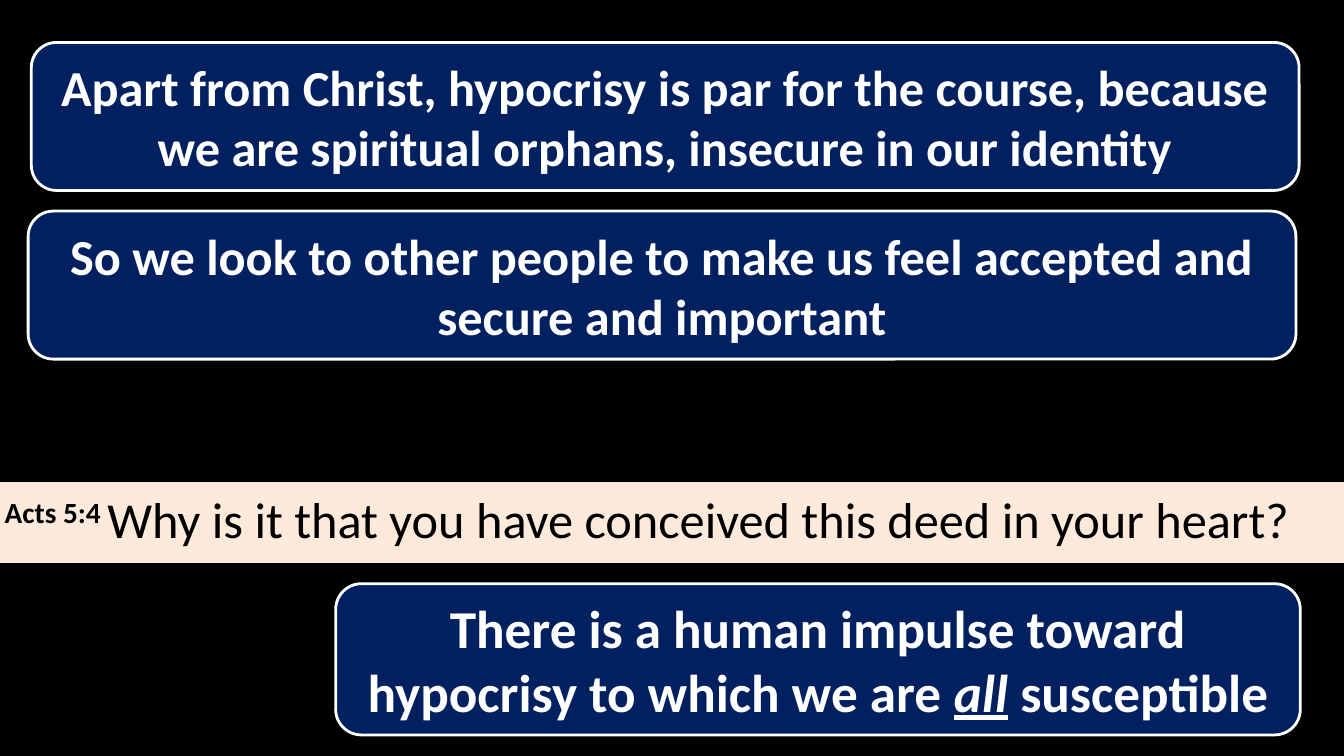
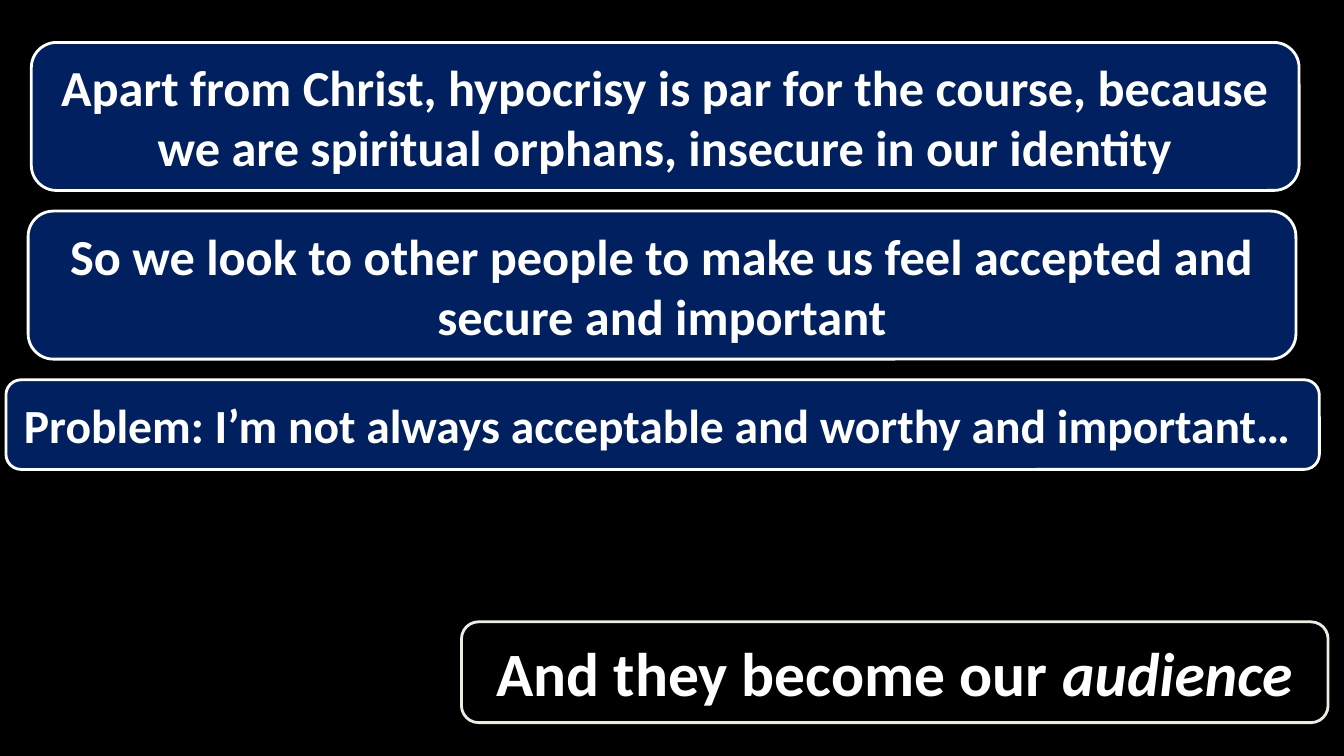
import pptx
import pptx.dml.color
import pptx.enum.shapes
import pptx.enum.text
import pptx.util
from dataclasses import dataclass

Cm, Pt = pptx.util.Cm, pptx.util.Pt
SHAPE = pptx.enum.shapes.MSO_SHAPE
ALIGN = pptx.enum.text.PP_ALIGN
ANCHOR = pptx.enum.text.MSO_ANCHOR


@dataclass(frozen=True)
class Theme:
    font: str = "Calibri"
    black: str = "000000"
    white: str = "FFFFFF"
    navy: str = "002060"
    peach: str = "FDEADA"
    cream: str = "EEECE1"
    problem_size: int = 34
    body_size: int = 36
    impulse_size: int = 38
    audience_size: int = 44
    callout_line: float = 2
    verse_line: float = 0.75


THEME = Theme()
CALLOUT_ADJUSTMENTS = (-0.22, 0.5, 0.17)
STACK_TOP, STACK_GAP = 1.07, 0.52

# Text is a list of (words, style) runs; stacked callouts need no top.
PREMISES = [
    dict(text=[("Apart from Christ, hypocrisy is par for the course, because "
                "we are spiritual orphans, insecure in our identity", "")],
         left=0.79, width=31.95, height=3.73, size=THEME.body_size),
    dict(text=[("So we look to other people to make us feel accepted and "
                "secure and important", "")],
         left=0.71, width=31.95, height=3.73, size=THEME.body_size),
]
PROBLEM = dict(
    text=[("Problem: I’m not always acceptable and worthy and important… ", "")],
    left=0.15, width=33.1, height=2.26, size=THEME.problem_size)
IMPULSE = dict(
    text=[("There is a human impulse toward hypocrisy to which we are ", ""),
          ("all", "italic underline"), (" susceptible", "")],
    left=8.46, top=14.71, width=24.31, height=3.81, size=THEME.impulse_size)
AUDIENCE = dict(
    text=[("And they become our ", ""), ("audience", "italic")],
    left=11.63, top=15.67, width=21.84, height=2.54, size=THEME.audience_size,
    fill=THEME.black, line=THEME.cream)
VERSE = dict(
    text=[("Acts 5:4\u00a0".replace("\u00a0", " "), "bold superscript"),
          ("Why is it that you have conceived this deed in your heart?", "")],
    left=-0.13, top=12.17, width=34.09, height=2.01)

SLIDES = [
    dict(stack=PREMISES, verse=VERSE, conclusion=IMPULSE),
    dict(stack=PREMISES + [PROBLEM], verse=None, conclusion=AUDIENCE),
]


def rgb(value):
    return pptx.dml.color.RGBColor.from_string(value)


def add_panel(slide, preset, box, fill, line, line_width):
    panel = slide.shapes.add_shape(
        preset, *(Cm(box[side]) for side in ("left", "top", "width", "height")))
    panel.shadow.inherit = False
    panel.fill.solid()
    panel.fill.fore_color.rgb = rgb(fill)
    panel.line.color.rgb = rgb(line)
    panel.line.width = Pt(line_width)
    return panel


def write_text(panel, runs, size, color, bold, align, anchor):
    frame = panel.text_frame
    frame.word_wrap = True
    frame.vertical_anchor = anchor
    paragraph = frame.paragraphs[0]
    paragraph.alignment = align
    font = paragraph.font
    font.name, font.size, font.bold = THEME.font, Pt(size), bold
    font.color.rgb = rgb(color)
    for words, style in runs:
        run = paragraph.add_run()
        run.text = words
        if "bold" in style:
            run.font.bold = True
        if "italic" in style:
            run.font.italic = True
        if "underline" in style:
            run.font.underline = True
        if "superscript" in style:
            run._r.get_or_add_rPr().set("baseline", "30000")


def add_callout(slide, callout):
    panel = add_panel(slide, SHAPE.ROUNDED_RECTANGULAR_CALLOUT, callout,
                      callout.get("fill", THEME.navy),
                      callout.get("line", THEME.white), THEME.callout_line)
    for index, value in enumerate(CALLOUT_ADJUSTMENTS):
        panel.adjustments[index] = value
    write_text(panel, callout["text"], callout["size"], THEME.white, True,
               ALIGN.CENTER, ANCHOR.MIDDLE)


def add_stack(slide, callouts):
    """Place callouts down the slide with equal gaps."""
    top = STACK_TOP
    for callout in callouts:
        add_callout(slide, dict(callout, top=top))
        top += callout["height"] + STACK_GAP


def add_verse(slide, verse):
    band = add_panel(slide, SHAPE.RECTANGLE, verse, THEME.peach, THEME.cream,
                     THEME.verse_line)
    write_text(band, verse["text"], THEME.body_size, THEME.black, False,
               ALIGN.LEFT, ANCHOR.TOP)


def main():
    deck = pptx.Presentation()
    deck.slide_width, deck.slide_height = Cm(33.87), Cm(19.05)
    blank = deck.slide_layouts.get_by_name("Blank")
    for content in SLIDES:
        slide = deck.slides.add_slide(blank)
        slide.background.fill.solid()
        slide.background.fill.fore_color.rgb = rgb(THEME.black)
        add_stack(slide, content["stack"])
        if content["verse"]:
            add_verse(slide, content["verse"])
        add_callout(slide, content["conclusion"])
    deck.save("out.pptx")


if __name__ == "__main__":
    main()
